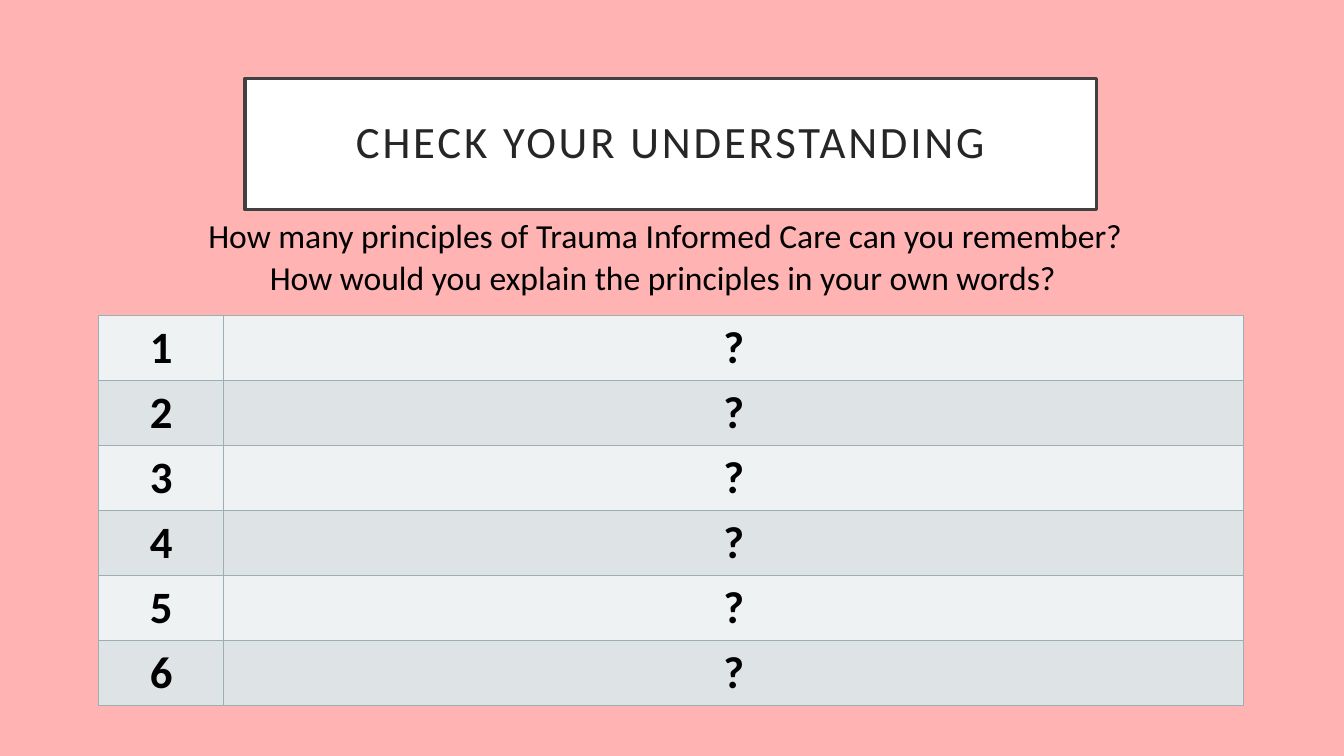
from dataclasses import dataclass
from typing import Any

from lxml.etree import SubElement
from pptx import Presentation
from pptx.dml.color import RGBColor as Color
from pptx.enum.shapes import MSO_SHAPE as Shape
from pptx.enum.text import MSO_ANCHOR as Anchor, MSO_AUTO_SIZE as AutoSize, PP_ALIGN as Align
from pptx.oxml.ns import qn
from pptx.util import Cm, Pt

COLORS = {
    "background": "FFB3B3",
    "title_fill": "FFFFFF",
    "title_line": "404040",
    "title_text": "262626",
    "text": "000000",
    "border": "9BAFB5",
    "odd_row": "EFF2F3",
    "even_row": "DEE3E5",
}
TITLE_FONT = {"name": "Calibri", "size": Pt(32), "bold": False}
QUESTION_FONT = {"name": "Calibri", "size": Pt(24), "bold": False}
CELL_FONT = {"name": "Calibri", "size": Pt(32), "bold": True}

PRINCIPLE_COUNT = 6
ROW_HEIGHT = 1.63
COLUMN_WIDTHS = (3.15, 25.7)


@dataclass(frozen=True)
class Question:
    text: str
    left: float
    top: float
    width: float


QUESTIONS = (
    Question("How many principles of Trauma Informed Care can you remember?", 5.0, 5.28, 23.8),
    Question("How would you explain the principles in your own words?", 6.55, 6.35, 20.73),
)


def color(name: str) -> Color:
    return Color.from_string(COLORS[name])


def set_values(target: Any, values: dict[str, Any]) -> None:
    for name, value in values.items():
        setattr(target, name, value)


def write(frame: Any, text: str, font: dict[str, Any], color_name: str, align: Align) -> Any:
    para = frame.paragraphs[0]
    para.alignment = align
    span = para.add_run()
    span.text = text
    set_values(span.font, font)
    span.font.color.rgb = color(color_name)
    return span


def add_title(page: Any) -> None:
    box = page.shapes.add_shape(Shape.RECTANGLE, Cm(6.17), Cm(1.98), Cm(21.46), Cm(3.3))
    box.shadow.inherit = False
    box.fill.solid()
    box.fill.fore_color.rgb = color("title_fill")
    box.line.color.rgb = color("title_line")
    box.line.width = Pt(2.5)
    frame = box.text_frame
    sides = ("left", "top", "right", "bottom")
    set_values(frame, {f"margin_{side}": Cm(0.5) for side in sides})
    set_values(frame, {"vertical_anchor": Anchor.MIDDLE, "word_wrap": True})
    span = write(frame, "CHECK YOUR UNDERSTANDING", TITLE_FONT, "title_text", Align.CENTER)
    frame.paragraphs[0].line_spacing = 0.9
    # Letter spacing in hundredths of a point
    span.font._element.set("spc", "200")


def add_question(page: Any, question: Question) -> None:
    box = page.shapes.add_textbox(
        Cm(question.left), Cm(question.top), Cm(question.width), Cm(1.28)
    )
    set_values(box.text_frame, {"word_wrap": False, "auto_size": AutoSize.SHAPE_TO_FIT_TEXT})
    write(box.text_frame, question.text, QUESTION_FONT, "text", Align.LEFT)


def add_borders(cell: Any) -> None:
    properties = cell._tc.get_or_add_tcPr()
    for side in ("lnL", "lnR", "lnT", "lnB"):
        line = SubElement(properties, qn(f"a:{side}"), w=str(Pt(1)))
        fill = SubElement(line, qn("a:solidFill"))
        SubElement(fill, qn("a:srgbClr"), val=COLORS["border"])


def add_principles(page: Any) -> None:
    table = page.shapes.add_table(
        PRINCIPLE_COUNT, len(COLUMN_WIDTHS), Cm(2.49), Cm(7.96),
        Cm(sum(COLUMN_WIDTHS)), Cm(PRINCIPLE_COUNT * ROW_HEIGHT),
    ).table
    set_values(table, {"first_row": False, "horz_banding": False})
    for column, width in zip(table.columns, COLUMN_WIDTHS):
        column.width = Cm(width)
    for number, row in enumerate(table.rows, start=1):
        row.height = Cm(ROW_HEIGHT)
        for cell, text in zip(row.cells, (str(number), "?")):
            add_borders(cell)
            cell.fill.solid()
            cell.fill.fore_color.rgb = color("odd_row" if number % 2 else "even_row")
            cell.vertical_anchor = Anchor.MIDDLE
            write(cell.text_frame, text, CELL_FONT, "text", Align.CENTER)


def main() -> None:
    deck = Presentation()
    set_values(deck, {"slide_width": Cm(33.87), "slide_height": Cm(19.05)})
    page = deck.slides.add_slide(deck.slide_layouts[6])
    page.background.fill.solid()
    page.background.fill.fore_color.rgb = color("background")

    # Heading, table of principles, then the two questions
    add_title(page)
    add_principles(page)
    for question in QUESTIONS:
        add_question(page, question)

    deck.save("out.pptx")


if __name__ == "__main__":
    main()
